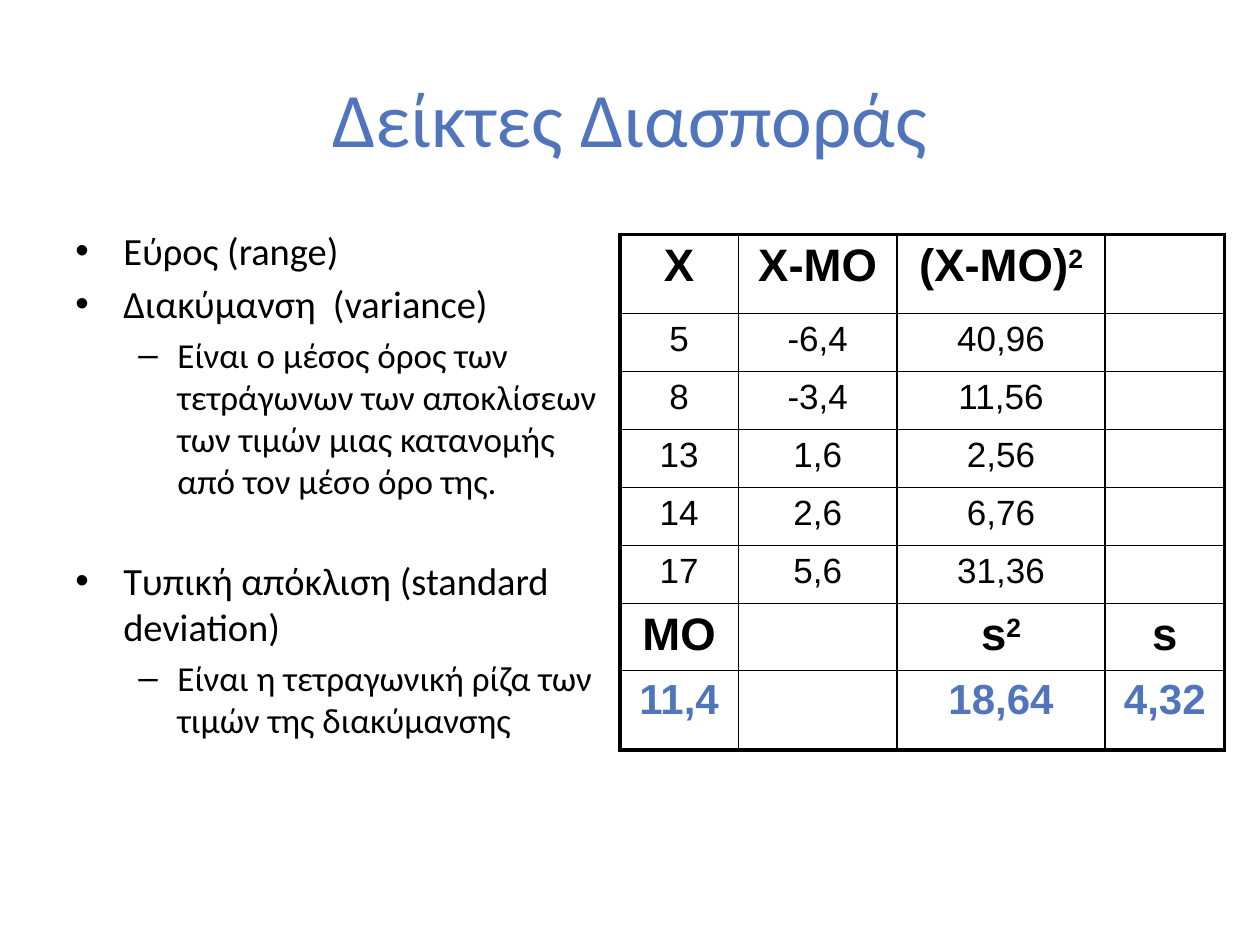
from lxml.etree import SubElement
from pptx import Presentation
from pptx.dml.color import RGBColor
from pptx.enum.text import MSO_ANCHOR, PP_ALIGN
from pptx.oxml import parse_xml
from pptx.oxml.ns import nsdecls, qn
from pptx.util import Inches, Pt

BLACK, BLUE = "000000", "5075BC"
TITLE = "Δείκτες Διασποράς"

# (level, text, space before in points)
BULLETS = [
    (0, "Εύρος (range)", 0),
    (0, "Διακύμανση  (variance)", 4),
    (1, "Είναι ο μέσος όρος των τετράγωνων των αποκλίσεων των τιμών μιας "
        "κατανομής από τον μέσο όρο της.", 4),
    (0, "Τυπική απόκλιση (standard deviation)", 32),
    (1, "Είναι η τετραγωνική ρίζα των τιμών της διακύμανσης", 4),
]
# level: (bullet, left margin, hanging indent, size)
LEVELS = [("•", 0.38, 0.38, 22), ("–", 0.81, 0.31, 20)]

# Text after ^ is raised
ROWS = [
    ("Χ", "Χ-ΜΟ", "(Χ-ΜΟ)^2", ""),
    ("5", "-6,4", "40,96", ""),
    ("8", "-3,4", "11,56", ""),
    ("13", "1,6", "2,56", ""),
    ("14", "2,6", "6,76", ""),
    ("17", "5,6", "31,36", ""),
    ("ΜΟ", "", "s^2", "s"),
    ("11,4", "", "18,64", "4,32"),
]
COLUMN_WIDTHS = [0.94, 1.26, 1.65, 0.95]
ROW_HEIGHTS = [0.63] + [0.46] * 5 + [0.53, 0.63]
# (size, bold, colour) for each row
HEADING, VALUE, RESULT = (26, True, BLACK), (20, False, BLACK), (24, True, BLUE)
ROW_STYLES = [HEADING] + [VALUE] * 5 + [HEADING, RESULT]
INNER_LINE, OUTER_LINE = 1, 2.25


def set_font(font, name, size, color, bold=False):
    font.name, font.size, font.bold = name, Pt(size), bold
    font.color.rgb = RGBColor.from_string(color)


def add_text_frame(slide, left, top, width, height):
    box = slide.shapes.add_textbox(*map(Inches, (left, top, width, height)))
    box.text_frame.word_wrap = True
    return box.text_frame


def set_bullet(paragraph, character, margin, hanging):
    properties = paragraph._p.get_or_add_pPr()
    properties.set("marL", str(Inches(margin)))
    properties.set("indent", str(-Inches(hanging)))
    SubElement(properties, qn("a:buFont")).set("typeface", "Arial")
    SubElement(properties, qn("a:buChar")).set("char", character)


def set_borders(cell, row, column):
    edges = {
        "L": column == 0,
        "R": column == len(COLUMN_WIDTHS) - 1,
        "T": row == 0,
        "B": row == len(ROWS) - 1,
    }
    properties = cell._tc.get_or_add_tcPr()
    for position, (side, outer) in enumerate(edges.items()):
        width = Pt(OUTER_LINE if outer else INNER_LINE)
        properties.insert(position, parse_xml(
            f'<a:ln{side} {nsdecls("a")} w="{width}"><a:solidFill>'
            f'<a:srgbClr val="{BLACK}"/></a:solidFill></a:ln{side}>'))


def fill_cell(cell, text, style):
    size, bold, color = style
    base, _, raised = text.partition("^")
    paragraph = cell.text_frame.paragraphs[0]
    paragraph.text = base
    paragraph.alignment = PP_ALIGN.CENTER
    if raised:
        run = paragraph.add_run()
        run.text = raised
        run._r.get_or_add_rPr().set("baseline", "30000")
    for run in paragraph.runs:
        set_font(run.font, "Arial", size, color, bold)


presentation = Presentation()
presentation.slide_width, presentation.slide_height = Inches(10), Inches(7.5)
slide = presentation.slides.add_slide(presentation.slide_layouts[6])

# Title
text_frame = add_text_frame(slide, 0.5, 0.3, 9, 1.25)
text_frame.vertical_anchor = MSO_ANCHOR.MIDDLE
text_frame.text = TITLE
paragraph = text_frame.paragraphs[0]
paragraph.alignment = PP_ALIGN.CENTER
set_font(paragraph.runs[0].font, "Calibri", 44, BLUE)

# Bulleted definitions
text_frame = add_text_frame(slide, 0.5, 1.75, 4.42, 4.95)
for index, (level, text, space) in enumerate(BULLETS):
    paragraph = text_frame.add_paragraph() if index else text_frame.paragraphs[0]
    character, margin, hanging, size = LEVELS[level]
    paragraph.text = text
    paragraph.level = level
    set_bullet(paragraph, character, margin, hanging)
    paragraph.space_before = Pt(space)
    set_font(paragraph.runs[0].font, "Calibri", size, BLACK)

# Table of deviations
table = slide.shapes.add_table(
    len(ROWS), len(COLUMN_WIDTHS), Inches(4.92), Inches(1.86),
    Inches(sum(COLUMN_WIDTHS)), Inches(sum(ROW_HEIGHTS))).table
table.first_row = table.horz_banding = False
for column, width in zip(table.columns, COLUMN_WIDTHS):
    column.width = Inches(width)
for row_index, (values, height, style) in enumerate(zip(ROWS, ROW_HEIGHTS, ROW_STYLES)):
    table.rows[row_index].height = Inches(height)
    for column_index, text in enumerate(values):
        cell = table.cell(row_index, column_index)
        cell.fill.background()
        set_borders(cell, row_index, column_index)
        if text:
            fill_cell(cell, text, style)

presentation.save("out.pptx")
